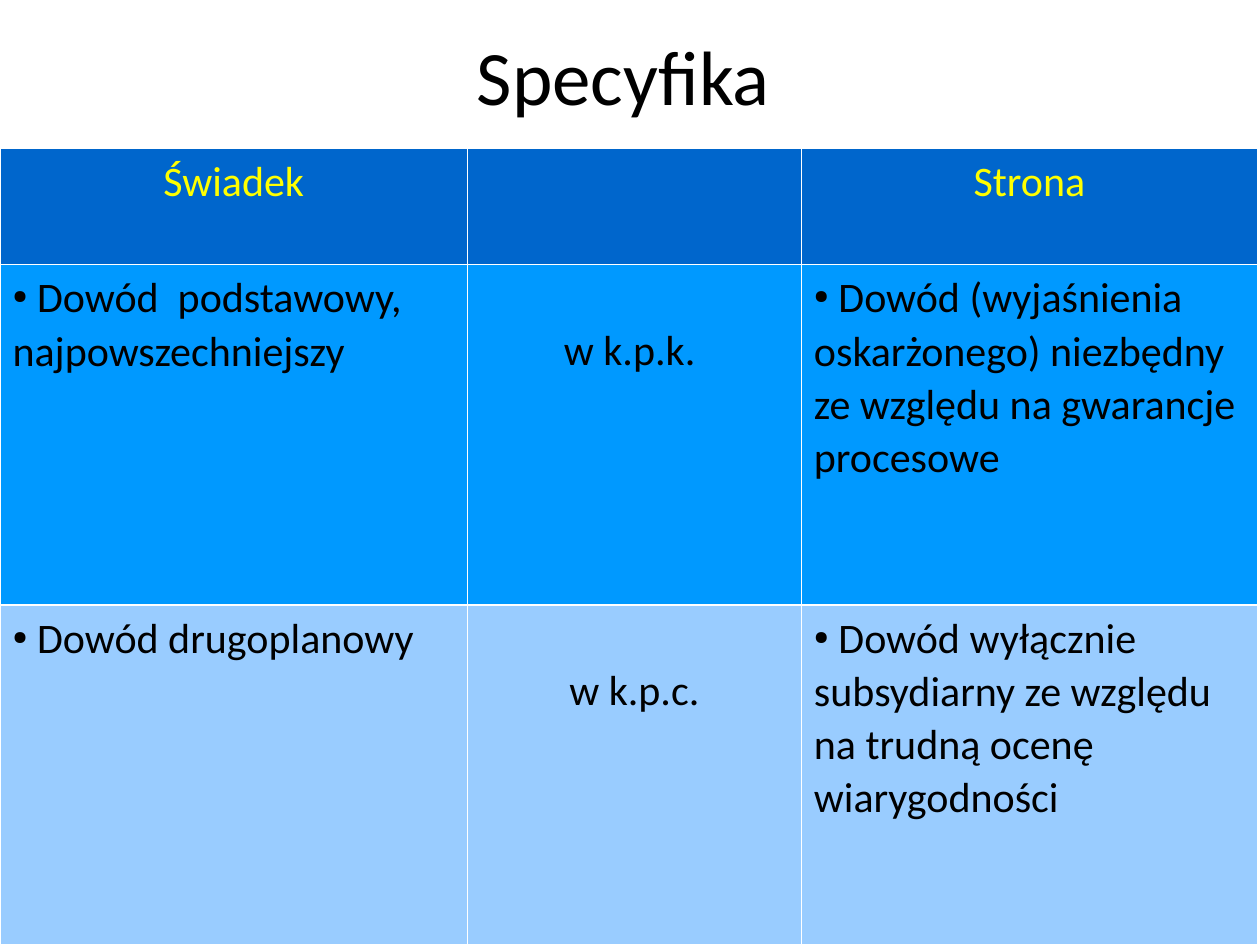
from dataclasses import dataclass

from lxml import etree
from pptx import Presentation, util as u
from pptx.dml.color import RGBColor
from pptx.enum import text
from pptx.oxml import ns

WIDTH, HEIGHT = u.Inches(10), u.Inches(7.5)
FONT = "Calibri"
BLACK, YELLOW = "000000", "FFFF00"
LINE = u.Inches(0.42)
COLUMN_SHARES = (0.371, 0.265, 0.362)
TABLE_TOP = 0.157


@dataclass
class Row:
    share: float
    fill: str
    witness: str
    code: str
    party: str
    color: str = BLACK
    is_header: bool = False


ROWS = (
    Row(0.123, "0066CC", "Świadek", "", "Strona", YELLOW, True),
    Row(0.36, "0099FF", " Dowód  podstawowy, najpowszechniejszy", "w k.p.k. ",
        " Dowód (wyjaśnienia oskarżonego) niezbędny ze względu na gwarancje procesowe"),
    Row(0.36, "99CCFF", " Dowód drugoplanowy", "w k.p.c.",
        " Dowód wyłącznie subsydiarny ze względu na trudną ocenę wiarygodności"),
)


def rgb(color: str) -> RGBColor:
    return RGBColor.from_string(color)


def set_font(para, size: float, color: str) -> None:
    para.font.name = FONT
    para.font.size = u.Pt(size)
    para.font.bold = False
    para.font.color.rgb = rgb(color)


def add_bullet(para) -> None:
    properties = para._p.get_or_add_pPr()
    properties.set("marL", "0")
    properties.set("indent", "0")
    color = etree.SubElement(properties, ns.qn("a:buClr"))
    etree.SubElement(color, ns.qn("a:srgbClr"), val=BLACK)
    etree.SubElement(properties, ns.qn("a:buSzPct"), val="45000")
    etree.SubElement(properties, ns.qn("a:buChar"), char="●")


def fill_cell(cell, words: str, row: Row, centred: bool) -> None:
    cell.fill.solid()
    cell.fill.fore_color.rgb = rgb(row.fill)
    if not words:
        return
    para = cell.text_frame.paragraphs[0]
    para.text = words
    para.line_spacing = 1.04
    if centred:
        para.alignment = text.PP_ALIGN.CENTER
    else:
        para.alignment = text.PP_ALIGN.LEFT
        add_bullet(para)
    set_font(para, 24, row.color)


def add_title(page, words: str) -> None:
    title = page.shapes.title
    title.left, title.top = u.Inches(0.45), u.Inches(-0.19)
    title.width, title.height = u.Inches(9), u.Inches(1.57)
    title.text_frame.vertical_anchor = text.MSO_ANCHOR.MIDDLE
    para = title.text_frame.paragraphs[0]
    para.text = words
    para.alignment = text.PP_ALIGN.CENTER
    set_font(para, 44, BLACK)


def add_comparison(page) -> None:
    table = page.shapes.add_table(
        len(ROWS), len(COLUMN_SHARES), 0, int(HEIGHT * TABLE_TOP),
        int(WIDTH * sum(COLUMN_SHARES)), int(HEIGHT * sum(row.share for row in ROWS)),
    ).table
    table.first_row = table.horz_banding = False
    for column, share in zip(table.columns, COLUMN_SHARES):
        column.width = int(WIDTH * share)
    for index, row in enumerate(ROWS):
        table.rows[index].height = int(HEIGHT * row.share)
        witness, code, party = table.rows[index].cells
        fill_cell(witness, row.witness, row, row.is_header)
        fill_cell(code, row.code, row, True)
        fill_cell(party, row.party, row, row.is_header)
        if row.code:
            code.margin_top = u.Inches(0.05) + LINE


def main() -> None:
    deck = Presentation()
    deck.slide_width, deck.slide_height = WIDTH, HEIGHT
    page = deck.slides.add_slide(deck.slide_layouts[5])
    add_title(page, "Specyfika")
    add_comparison(page)
    deck.save("out.pptx")


if __name__ == "__main__":
    main()
